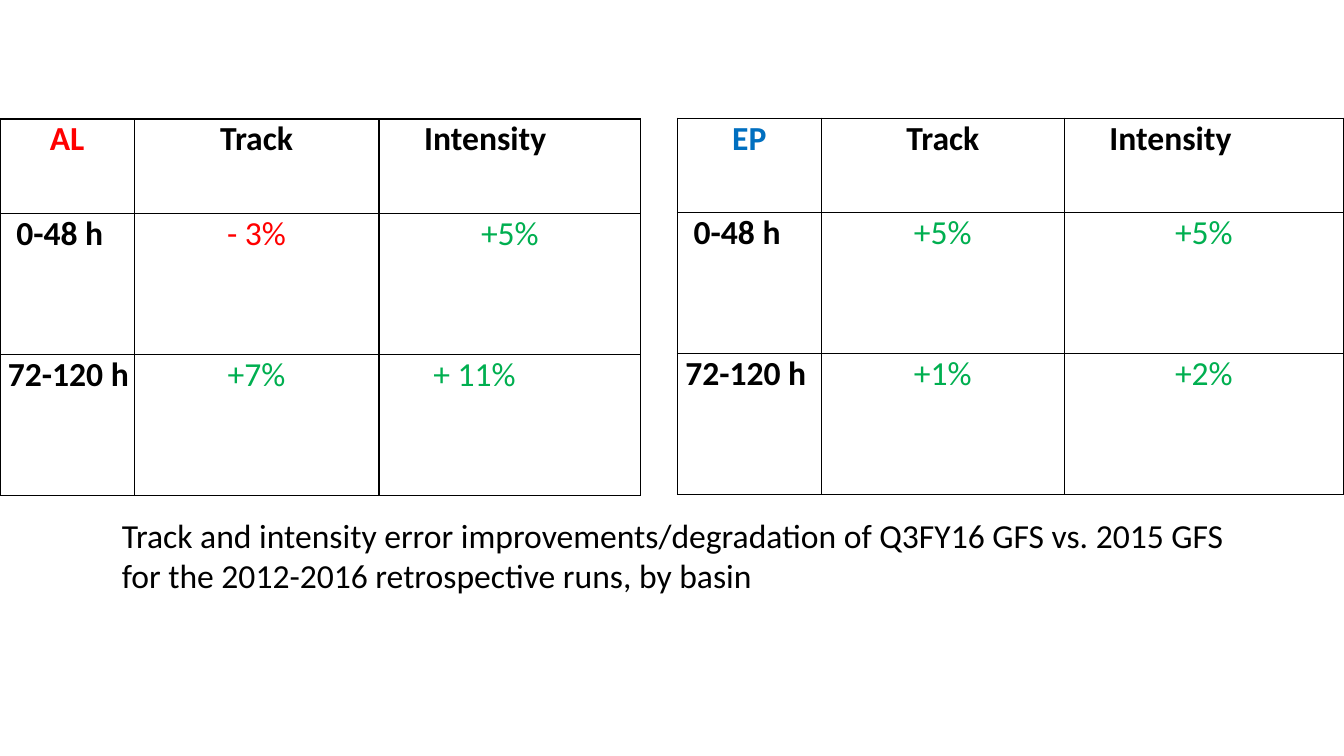
from dataclasses import dataclass

from lxml.etree import SubElement
from pptx import Presentation
from pptx.dml.color import RGBColor
from pptx.enum.text import PP_ALIGN
from pptx.oxml.ns import qn
from pptx.util import Cm, Pt

# Content: cells are (text, left indent in cm); None means centred
HEADINGS = [("Track", None), ("Intensity", 1.14)]
EARLY = ("0-48 h", 0.41)
LATE = ("72-120 h", 0.2)

BASINS = [
    {
        "name": "AL", "color": "FF0000",
        "left": 0, "top": 3.0, "columns": [3.38, 6.17, 6.6],
        "results": [
            [EARLY, ("- 3%", None), ("+5%", None)],
            [LATE, ("+7%", None), ("+ 11%", 1.37)],
        ],
    },
    {
        "name": "EP", "color": "006FC0",
        "left": 17.07, "top": 2.98, "columns": [3.63, 6.12, 7.04],
        "results": [
            [EARLY, ("+5%", None), ("+5%", None)],
            [LATE, ("+1%", None), ("+2%", None)],
        ],
    },
]
ROW_HEIGHTS = [2.37, 3.56, 3.56]
CAPTION = ("Track and intensity error improvements/degradation of Q3FY16 GFS "
           "vs. 2015 GFS for the 2012-2016 retrospective runs, by basin")


@dataclass(frozen=True)
class Theme:
    font: str = "Calibri"
    size: float = 24
    text: str = "000000"
    gain: str = "00AF50"
    loss: str = "FF0000"
    border: str = "000000"
    border_width: float = 0.96


THEME = Theme()


def style_text(paragraph, color, bold=False):
    for run in paragraph.runs:
        run.font.name = THEME.font
        run.font.size = Pt(THEME.size)
        run.font.bold = bold
        run.font.color.rgb = RGBColor.from_string(color)


def add_borders(cell):
    properties = cell._tc.get_or_add_tcPr()
    for position, side in enumerate(("a:lnL", "a:lnR", "a:lnT", "a:lnB")):
        border = SubElement(properties, qn(side), w=str(Pt(THEME.border_width)))
        fill = SubElement(border, qn("a:solidFill"))
        SubElement(fill, qn("a:srgbClr"), val=THEME.border)
        properties.insert(position, border)


def fill_cell(cell, text, indent, color, bold):
    cell.margin_left = cell.margin_right = 0
    cell.margin_top = cell.margin_bottom = 0
    cell.fill.background()
    add_borders(cell)
    paragraph = cell.text_frame.paragraphs[0]
    paragraph.text = text
    if indent is None:
        paragraph.alignment = PP_ALIGN.CENTER
    else:
        paragraph.alignment = PP_ALIGN.LEFT
        paragraph._p.get_or_add_pPr().set("marL", str(Cm(indent)))
    style_text(paragraph, color, bold)


def result_color(text):
    return {"+": THEME.gain, "-": THEME.loss}.get(text[0], THEME.text)


def add_basin(slide, basin):
    rows = [[(basin["name"], None), *HEADINGS], *basin["results"]]
    columns = basin["columns"]
    table = slide.shapes.add_table(
        len(rows), len(columns), Cm(basin["left"]), Cm(basin["top"]),
        Cm(sum(columns)), Cm(sum(ROW_HEIGHTS))).table
    table.first_row = table.horz_banding = False
    for column, width in zip(table.columns, columns):
        column.width = Cm(width)
    for row, height in zip(table.rows, ROW_HEIGHTS):
        row.height = Cm(height)
    for r, row in enumerate(rows):
        for c, (text, indent) in enumerate(row):
            color = basin["color"] if r == c == 0 else result_color(text)
            fill_cell(table.cell(r, c), text, indent, color, r == 0 or c == 0)


def main():
    presentation = Presentation()
    presentation.slide_width = Cm(33.87)
    presentation.slide_height = Cm(19.05)
    slide = presentation.slides.add_slide(presentation.slide_layouts[6])

    # One table per ocean basin
    for basin in BASINS:
        add_basin(slide, basin)

    # Caption below the tables
    caption = slide.shapes.add_textbox(Cm(2.82), Cm(12.85), Cm(29.36), Cm(2.31))
    caption.text_frame.word_wrap = True
    caption.text_frame.text = CAPTION
    style_text(caption.text_frame.paragraphs[0], THEME.text)

    presentation.save("out.pptx")


if __name__ == "__main__":
    main()
